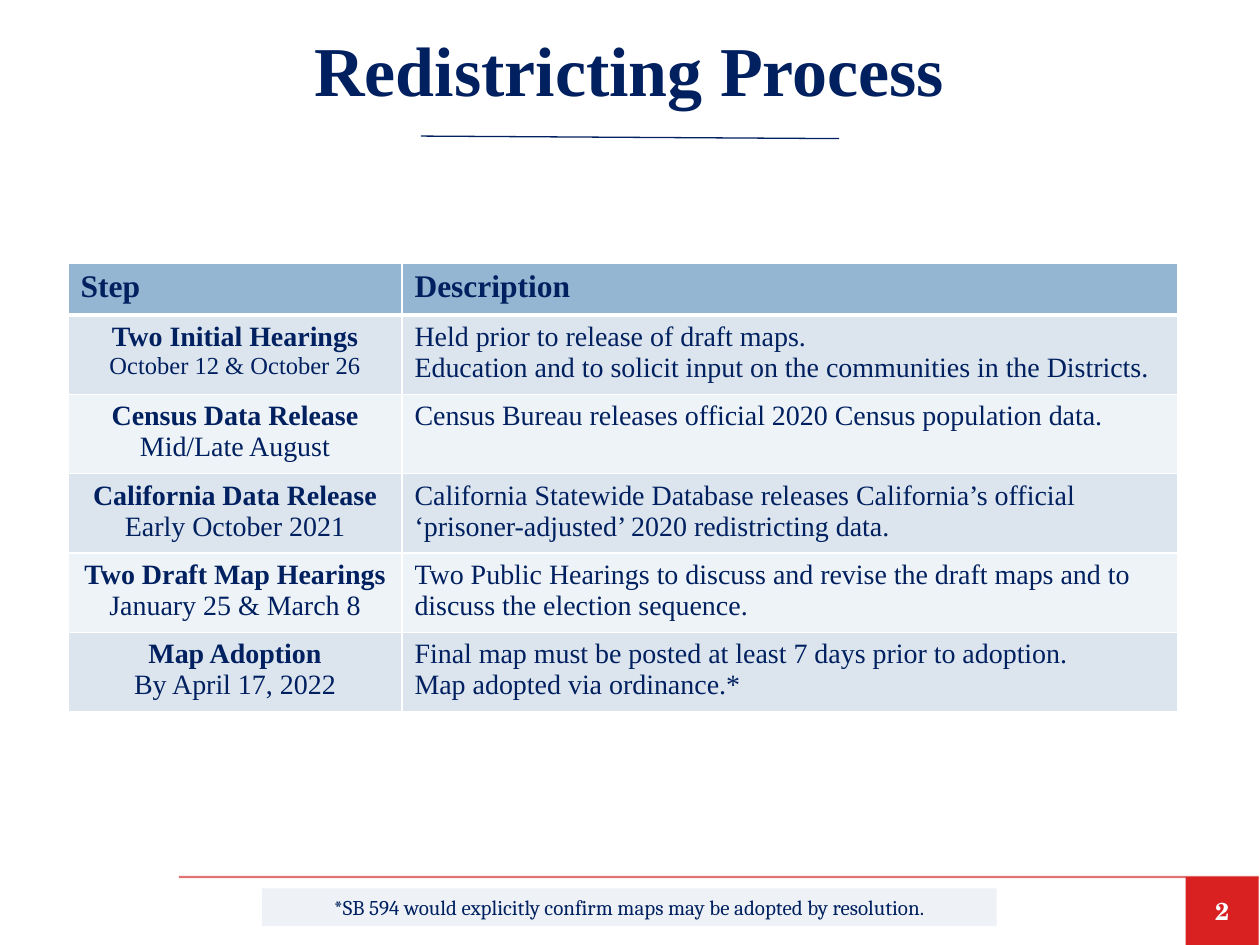
"""Build the Redistricting Process slide: title, step table, footnote and page number."""
from lxml.etree import SubElement
from pptx import Presentation
from pptx.dml.color import RGBColor
from pptx.enum.shapes import MSO_CONNECTOR, MSO_SHAPE
from pptx.enum.text import MSO_ANCHOR, PP_ALIGN
from pptx.oxml.ns import qn
from pptx.util import Inches, Pt

THEME = {
    "navy": "002060", "red": "D92121", "rule": "C80000", "white": "FFFFFF",
    "head": "94B6D2", "bands": ("DCE5EE", "EEF3F7"), "note": "EEF2F7",
    "title_pt": 40, "head_pt": 18, "body_pt": 16, "small_pt": 14, "note_pt": 12,
    "serif": "Times New Roman", "note_font": "Cambria", "page_font": "TeX Gyre Schola",
}
T = THEME

prs = Presentation()
prs.slide_width, prs.slide_height = Inches(10), Inches(7.5)
COL, ROW = prs.slide_width / 100, prs.slide_height / 75


def grid(x, y, w, h):
    return [int(v * unit) for v, unit in zip((x, y, w, h), (COL, ROW, COL, ROW))]


def write(tf, lines, align=PP_ALIGN.LEFT, color=T["navy"], font=T["serif"]):
    for i, (text, size, bold) in enumerate(lines):
        p = tf.paragraphs[0] if i == 0 else tf.add_paragraph()
        p.alignment = align
        r = p.add_run()
        r.text = text
        for key, value in {"name": font, "size": Pt(size), "bold": bold}.items():
            setattr(r.font, key, value)
        r.font.color.rgb = RGBColor.from_string(color)


s = prs.slides.add_slide(prs.slide_layouts[5])

title = s.shapes.title
title.left, title.top, title.width, title.height = grid(3.7, 0, 92.5, 10.8)
title.text_frame.vertical_anchor = MSO_ANCHOR.MIDDLE
write(title.text_frame, [("Redistricting Process", T["title_pt"], True)], PP_ALIGN.CENTER)

rules = [
    ((14.2, 69.6, 99.9, 69.6), T["rule"], 1.25, 55),
    ((33.4, 10.8, 66.6, 11), T["navy"], 0.75, 100),
]
for ends, color, width, opacity in rules:
    c = s.shapes.add_connector(MSO_CONNECTOR.STRAIGHT, *grid(*ends))
    c.line.color.rgb = RGBColor.from_string(color)
    c.line.width = Pt(width)
    if opacity < 100:
        clr = next(c.line._ln.iter(qn("a:srgbClr")))
        SubElement(clr, qn("a:alpha"), val=str(opacity * 1000))
    SubElement(c._element.spPr, qn("a:effectLst"))

boxes = [
    ((94.1, 69.6, 5.8, 5.4), T["red"], MSO_ANCHOR.MIDDLE,
     ("2", T["small_pt"], True), T["white"], T["page_font"]),
    ((20.8, 70.5, 58.3, 3), T["note"], MSO_ANCHOR.TOP,
     ("*SB 594 would explicitly confirm maps may be adopted by resolution.",
      T["note_pt"], False), T["navy"], T["note_font"]),
]
for place, fill, anchor, line, color, font in boxes:
    sp = s.shapes.add_shape(MSO_SHAPE.RECTANGLE, *grid(*place))
    sp.shadow.inherit = False
    sp.fill.solid()
    sp.fill.fore_color.rgb = RGBColor.from_string(fill)
    sp.line.fill.background()
    sp.text_frame.word_wrap = True
    sp.text_frame.vertical_anchor = anchor
    write(sp.text_frame, [line], PP_ALIGN.CENTER, color, font)

steps = [
    ("Two Initial Hearings", "October 12 & October 26", T["small_pt"],
     ["Held prior to release of draft maps.",
      "Education and to solicit input on the communities in the Districts."]),
    ("Census Data Release", "Mid/Late August", T["body_pt"],
     ["Census Bureau releases official 2020 Census population data."]),
    ("California Data Release", "Early October 2021", T["body_pt"],
     ["California Statewide Database releases California’s official "
      "‘prisoner-adjusted’ 2020 redistricting data."]),
    ("Two Draft Map Hearings", "January 25 & March 8", T["body_pt"],
     ["Two Public Hearings to discuss and revise the draft maps and to "
      "discuss the election sequence."]),
    ("Map Adoption", "By April 17, 2022", T["body_pt"],
     ["Final map must be posted at least 7 days prior to adoption.",
      "Map adopted via ordinance.*"]),
]
cells = [[[(name, T["head_pt"], True)] for name in ("Step", "Description")]]
for name, date, date_pt, notes in steps:
    cells.append([[(name, T["body_pt"], True), (date, date_pt, False)],
                  [(note, T["body_pt"], False) for note in notes]])

table = s.shapes.add_table(len(cells), 2, *grid(5.4, 20.9, 88.1, 35.6)).table
for column, width in zip(table.columns, (26.5, 61.6)):
    column.width = int(width * COL)
for i, lines in enumerate(cells):
    table.rows[i].height = int((6.3 if i else 4.1) * ROW)
    fill = T["bands"][(i - 1) % 2] if i else T["head"]
    for j, text in enumerate(lines):
        cell = table.cell(i, j)
        tcPr = cell._tc.get_or_add_tcPr()
        for side, pt in {"L": 1, "R": 1, "T": 3 if i == 1 else 1, "B": 1 if i else 3}.items():
            ln = SubElement(tcPr, qn(f"a:ln{side}"), w=str(Pt(pt)))
            SubElement(SubElement(ln, qn("a:solidFill")), qn("a:srgbClr"), val=T["white"])
        cell.fill.solid()
        cell.fill.fore_color.rgb = RGBColor.from_string(fill)
        write(cell.text_frame, text, PP_ALIGN.CENTER if i and j == 0 else PP_ALIGN.LEFT)

prs.save("out.pptx")
